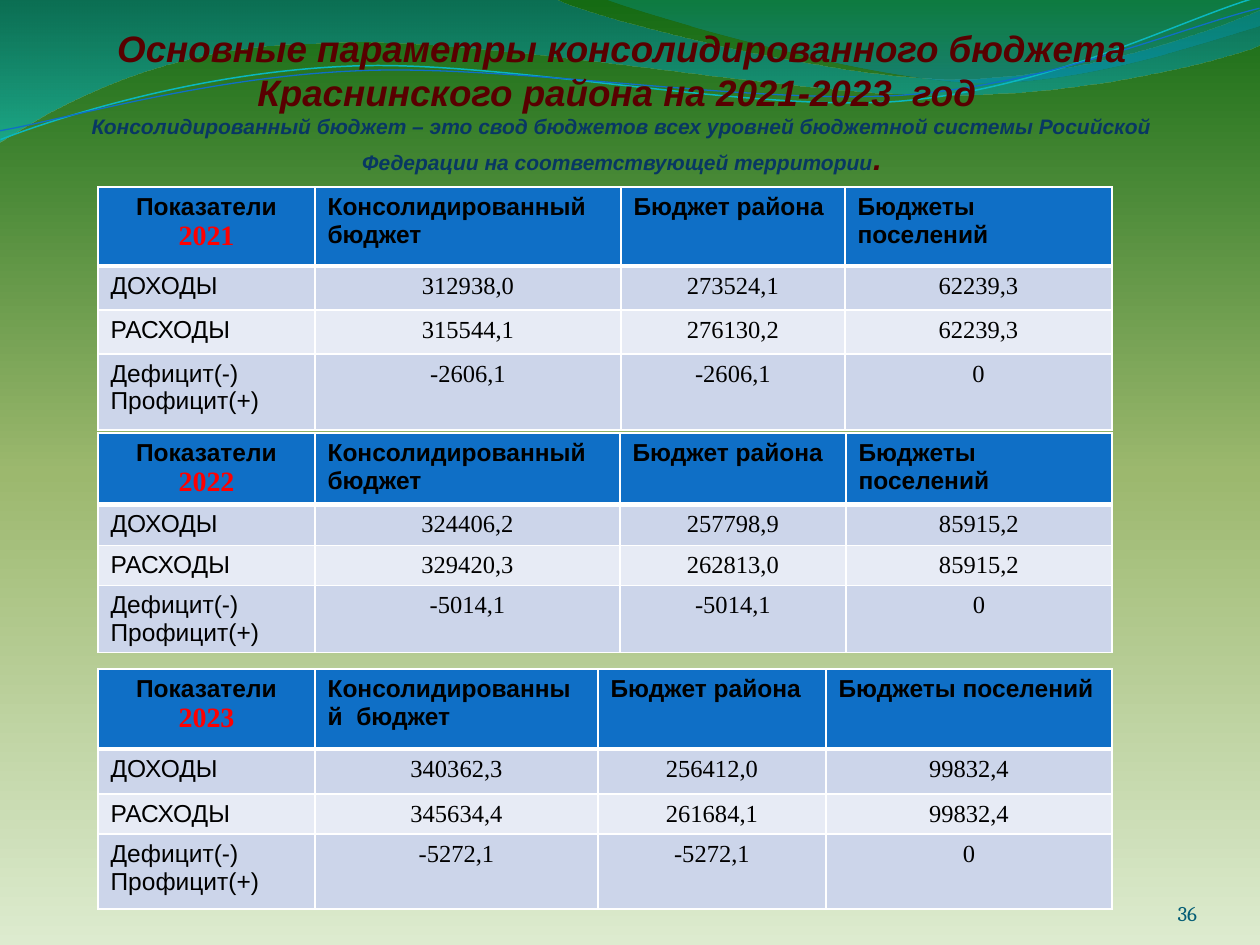
from lxml import etree
from pptx import Presentation
from pptx.dml.color import RGBColor
from pptx.enum.text import MSO_ANCHOR, PP_ALIGN
from pptx.oxml.ns import qn
from pptx.util import Emu, Pt

PX = 914400 / 126
LEFT, CENTER, RIGHT = PP_ALIGN.LEFT, PP_ALIGN.CENTER, PP_ALIGN.RIGHT
BOTTOM = MSO_ANCHOR.BOTTOM
COLORS = {
    "title": "580000", "subtitle": "083763", "number": "045D75",
    "text": "000000", "year": "FF0000", "header": "0F6FC6",
    "odd": "CCD5EA", "even": "E7EBF5", "border": "FFFFFF",
    "teal line": "0AB8BF", "blue line": "0F6FC6",
}


def add_span(para, text, color, **formats):
    span = para.add_run()
    span.text = text
    span.font.color.rgb = RGBColor.from_string(COLORS[color])
    for name, value in formats.items():
        setattr(span.font, name, value)


def set_gradient(fill, element, stops, angle):
    """Fill with (position %, colour, opacity %) stops; angle is counter-clockwise."""
    fill.gradient()
    fill.gradient_angle = angle
    stop_list = element.find(".//" + qn("a:gsLst"))
    for old_stop in list(stop_list):
        stop_list.remove(old_stop)
    for position, color, opacity in stops:
        stop = etree.SubElement(stop_list, qn("a:gs"), pos=str(position * 1000))
        rgb = etree.SubElement(stop, qn("a:srgbClr"), val=color)
        if opacity < 100:
            etree.SubElement(rgb, qn("a:alpha"), val=str(opacity * 1000))


deck = Presentation()
deck.slide_width, deck.slide_height = Emu(round(1260 * PX)), Emu(round(945 * PX))
page = deck.slides.add_slide(deck.slide_layouts[6])
set_gradient(page.background.fill, page.element,
             [(0, "DDEBCF", 100), (50, "9CB86E", 100), (100, "156B13", 100)], 90)

# Waves: a start point, then segments of one point (line) or three (cubic curve)
left_wave = [
    (0, -1), [(554, -1)],
    [(600, 21), (837, 79), (955, 79)], [(1075, 79), (1207, 33), (1260, 11)],
    [(1261, 45)],
    [(1239, 55), (1096, 96), (940, 95)], [(784, 95), (481, 35), (324, 43)],
    [(163, 44), (58, 105), (-1, 142)],
]
right_wave = [
    (604, -1),
    [(641, 14), (859, 78), (969, 82)], [(1079, 87), (1211, 40), (1260, 26)],
    [(1260, 0)],
]
teal_line = [
    (-2, 110),
    [(58, 90), (199, 52), (350, 53)], [(499, 53), (745, 118), (896, 114)],
    [(1049, 109), (1184, 45), (1260, 27)],
]
blue_line = [
    (-2, 101),
    [(57, 94), (207, 57), (357, 58)], [(509, 58), (752, 111), (902, 108)],
    [(1052, 104), (1188, 52), (1262, 38)],
]
waves = [
    (left_wave, [(0, "0074A1", 45), (100, "00C6CF", 55)], None, 0),
    (right_wave, [(0, "00A1A9", 30), (80, "008BBF", 45)], None, 0),
    (teal_line, None, "teal line", 0.85),
    (blue_line, None, "blue line", 0.75),
]
for (start, *segments), stops, line_color, line_width in waves:
    builder = page.shapes.build_freeform(*(round(length * PX) for length in start))
    corners = [(round(x * PX), round(y * PX)) for segment in segments for x, y in segment]
    builder.add_line_segments(corners, close=stops is not None)
    wave = builder.convert_to_shape()
    wave.shadow.inherit = False

    # Each run of three straight segments becomes one cubic curve
    straight = iter(wave.element.findall(".//" + qn("a:lnTo")))
    for segment in segments:
        parts = [next(straight) for _ in segment]
        if len(parts) == 3:
            curve = etree.Element(qn("a:cubicBezTo"))
            parts[0].addprevious(curve)
            for part in parts:
                curve.append(part[0])
                part.getparent().remove(part)

    if stops:
        set_gradient(wave.fill, wave.element, stops, 270)
        wave.line.fill.background()
    else:
        wave.rotation = 357.3
        wave.fill.background()
        wave.line.color.rgb = RGBColor.from_string(COLORS[line_color])
        wave.line.width = Pt(line_width)

heading = {"size": Pt(21), "name": "Arial", "bold": True, "italic": True}
note = {**heading, "size": Pt(12)}
full_stop = {**heading, "size": Pt(18)}
number = {"size": Pt(12), "name": "Cambria"}
texts = [
    ((79, 0, 1086, 177), 6, CENTER, [
        [("Основные параметры консолидированного бюджета", "title", heading)],
        [("Краснинского района на 2021-2023  год ", "title", heading)],
        [("Консолидированный бюджет – это свод бюджетов всех уровней бюджетной системы "
          "Росийской Федерации на соответствующей территории", "subtitle", note),
         (".", "title", full_stop)],
    ]),
    ((1092, 876, 105, 50), 0, RIGHT, [[("36", "number", number)]]),
]
for place, top_inset, align, lines in texts:
    box = page.shapes.add_textbox(*(Emu(round(length * PX)) for length in place))
    frame = box.text_frame
    settings = {"word_wrap": True, "vertical_anchor": BOTTOM, "margin_left": 0,
                "margin_right": 0, "margin_bottom": 0,
                "margin_top": Emu(round(top_inset * PX))}
    for name, value in settings.items():
        setattr(frame, name, value)
    for index, spans in enumerate(lines):
        para = frame.paragraphs[0] if index == 0 else frame.add_paragraph()
        para.alignment = align
        for text, color, formats in spans:
            add_span(para, text, color, **formats)

headers = ["Консолидированный  бюджет", "Бюджет района", "Бюджеты поселений"]
labels = ["ДОХОДЫ", "РАСХОДЫ", "Дефицит(-)\nПрофицит(+)"]
budgets = [
    ("2021", 187, [217, 306, 224, 267], [79, 44, 44, 76],
     [["312938,0", "273524,1", "62239,3"],
      ["315544,1", "276130,2", "62239,3"],
      ["-2606,1", "-2606,1", "0"]]),
    ("2023", 669, [217, 283, 228, 286], [80, 45, 40, 75],
     [["340362,3", "256412,0", "99832,4"],
      ["345634,4", "261684,1", "99832,4"],
      ["-5272,1", "-5272,1", "0"]]),
    ("2022", 433, [217, 305, 226, 266], [71, 41, 40, 67],
     [["324406,2", "257798,9", "85915,2"],
      ["329420,3", "262813,0", "85915,2"],
      ["-5014,1", "-5014,1", "0"]]),
]
for year, top, widths, heights, values in budgets:
    place = (98, top, sum(widths), sum(heights))
    table = page.shapes.add_table(
        4, 4, *(Emu(round(length * PX)) for length in place)).table
    for column, width in zip(table.columns, widths):
        column.width = Emu(round(width * PX))
    for row, height in zip(table.rows, heights):
        row.height = Emu(round(height * PX))
    grid = [["Показатели\n" + year, *headers]]
    grid += [[label, *amounts] for label, amounts in zip(labels, values)]
    for r, cell_texts in enumerate(grid):
        for c, text in enumerate(cell_texts):
            cell = table.cell(r, c)
            cell.margin_bottom = Emu(round(2 * PX))
            cell.fill.solid()
            shade = "header" if r == 0 else "odd" if r % 2 else "even"
            cell.fill.fore_color.rgb = RGBColor.from_string(COLORS[shade])
            centered = (r == 0) == (c == 0)
            for index, line in enumerate(text.split("\n")):
                frame = cell.text_frame
                para = frame.paragraphs[0] if index == 0 else frame.add_paragraph()
                para.alignment = CENTER if centered else LEFT
                is_year = line == year
                serif = is_year or (r > 0 and c > 0)
                add_span(para, line, "year" if is_year else "text",
                         size=Pt(16 if is_year else 14), bold=r == 0,
                         name="Times New Roman" if serif else "Arial")
            properties = cell._tc.get_or_add_tcPr()
            for index, side in enumerate(("lnL", "lnR", "lnT", "lnB")):
                thick = (r, side) in ((0, "lnB"), (1, "lnT"))
                border = etree.Element(qn("a:" + side), w=str(Pt(3 if thick else 1)))
                paint = etree.SubElement(border, qn("a:solidFill"))
                etree.SubElement(paint, qn("a:srgbClr"), val=COLORS["border"])
                properties.insert(index, border)

deck.save("out.pptx")
